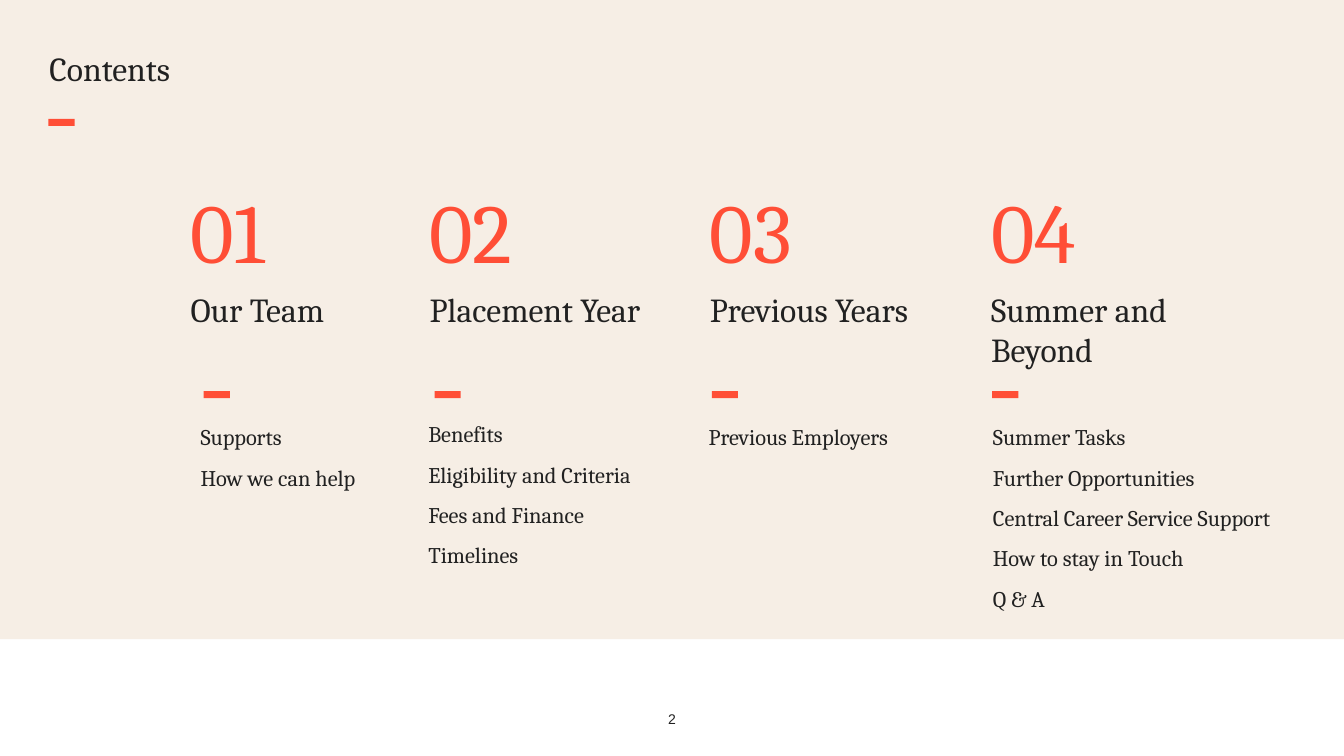
from pptx import Presentation
from pptx.dml.color import RGBColor
from pptx.enum.shapes import MSO_SHAPE
from pptx.enum.text import MSO_ANCHOR, MSO_AUTO_SIZE, PP_ALIGN
from pptx.util import Pt
from lxml.etree import SubElement

SCALE = 9144
COLORS = {"cream": "F6EEE5", "coral": "FF4E36", "ink": "212121"}
NS = "{http://schemas.openxmlformats.org/drawingml/2006/main}"
HEAD_TOP, DASH_TOP = 197, 388
COLUMNS = [
    ("Our Team", 189, 202, (189, 402, 252, 86),
     ["Supports", "How we can help"]),
    ("Placement Year", 426, 431, (415, 399, 252, 167),
     ["Benefits", "Eligibility and Criteria", "Fees and Finance", "Timelines"]),
    ("Previous Years", 704, 706, (693, 402, 252, 86),
     ["Previous Employers"]),
    ("Summer and Beyond", 983, 984, (975, 402, 334, 207),
     ["Summer Tasks", "Further Opportunities", "Central Career Service Support",
      "How to stay in Touch", "Q & A"]),
]


def px(value):
    return value * SCALE


def color(name):
    return RGBColor.from_string(COLORS[name])


def place(shape, left, top, width, height):
    shape.left, shape.top = px(left), px(top)
    shape.width, shape.height = px(width), px(height)


def setup(shape, anchor=MSO_ANCHOR.TOP, inset=0):
    frame = shape.text_frame
    frame.word_wrap = True
    frame.auto_size = MSO_AUTO_SIZE.NONE
    frame.vertical_anchor = anchor
    frame.margin_left = frame.margin_right = px(inset)
    frame.margin_top = frame.margin_bottom = px(inset // 2)
    return frame


def write(frame, text, size=16, font="Cambria", tint="ink",
          align=PP_ALIGN.LEFT, line=1.0, after=0):
    para = frame.paragraphs[0]
    if para.runs:
        para = frame.add_paragraph()
    props = para._p.get_or_add_pPr()
    props.set("marL", "0")
    props.set("indent", "0")
    SubElement(props, NS + "buNone")
    para.alignment = align
    para.line_spacing = line
    para.space_before, para.space_after = Pt(0), Pt(after)
    run = para.add_run()
    run.text = text
    run.font.name, run.font.size = font, Pt(size)
    run.font.bold = False
    run.font.color.rgb = color(tint)


def block(slide, left, top, width, height, tint):
    shape = slide.shapes.add_shape(
        MSO_SHAPE.RECTANGLE, px(left), px(top), px(width), px(height))
    shape.shadow.inherit = False
    shape.fill.solid()
    shape.fill.fore_color.rgb = color(tint)
    shape.line.fill.background()
    return shape


def dash(slide, left, top):
    block(slide, left, top, 26, 7, "coral")


def label(slide, box, anchor=MSO_ANCHOR.TOP, inset=0):
    shape = slide.shapes.add_textbox(*map(px, box))
    return setup(shape, anchor, inset)


def header(shape, number, name, left):
    place(shape, left, HEAD_TOP, 252, 191)
    frame = setup(shape)
    write(frame, f"{number:02}", size=60, tint="coral", line=0.8, after=7)
    write(frame, name, size=24)


def topics(slide, box, items):
    frame = label(slide, box, inset=10)
    for item in items:
        write(frame, item, line=1.5)


def main():
    deck = Presentation()
    deck.slide_width, deck.slide_height = px(1333), px(750)
    slide = deck.slides.add_slide(deck.slide_layouts.get_by_name("Comparison"))
    title, *heads = slide.placeholders

    panel = block(slide, 0, 0, 1333, 634, "cream")
    title.element.addprevious(panel.element)
    place(title, 49, 17, 1237, 107)
    write(setup(title, MSO_ANCHOR.MIDDLE), "Contents", size=24, line=0.9)
    dash(slide, 48, 118)

    for number, (head, column) in enumerate(zip(heads, COLUMNS), 1):
        name, left, mark, box, items = column
        header(head, number, name, left)
        dash(slide, mark, DASH_TOP)
        topics(slide, box, items)

    page = label(slide, (619, 700, 95, 26), MSO_ANCHOR.MIDDLE)
    write(page, "2", size=10, font="Arial", align=PP_ALIGN.CENTER)
    deck.save("out.pptx")


if __name__ == "__main__":
    main()
